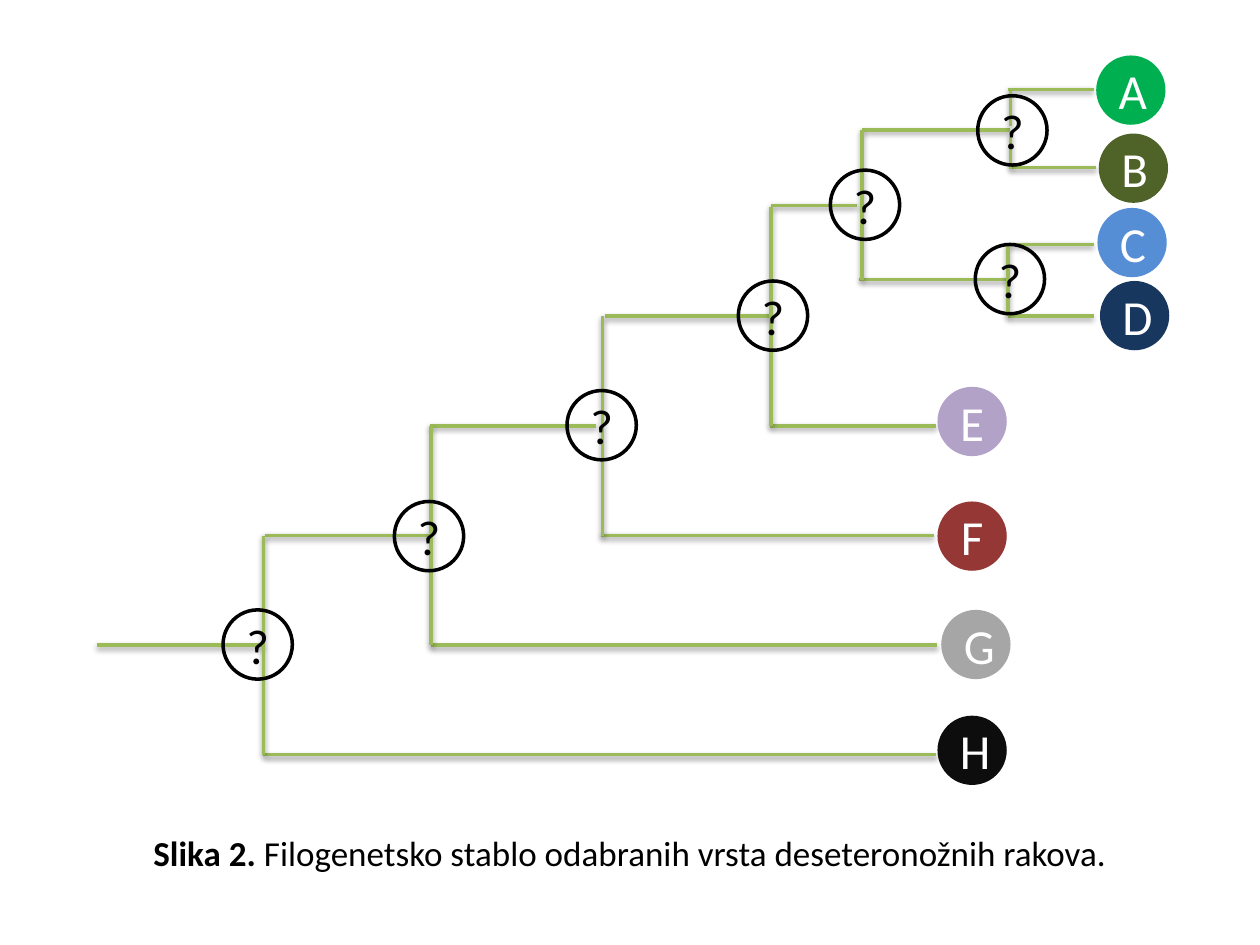
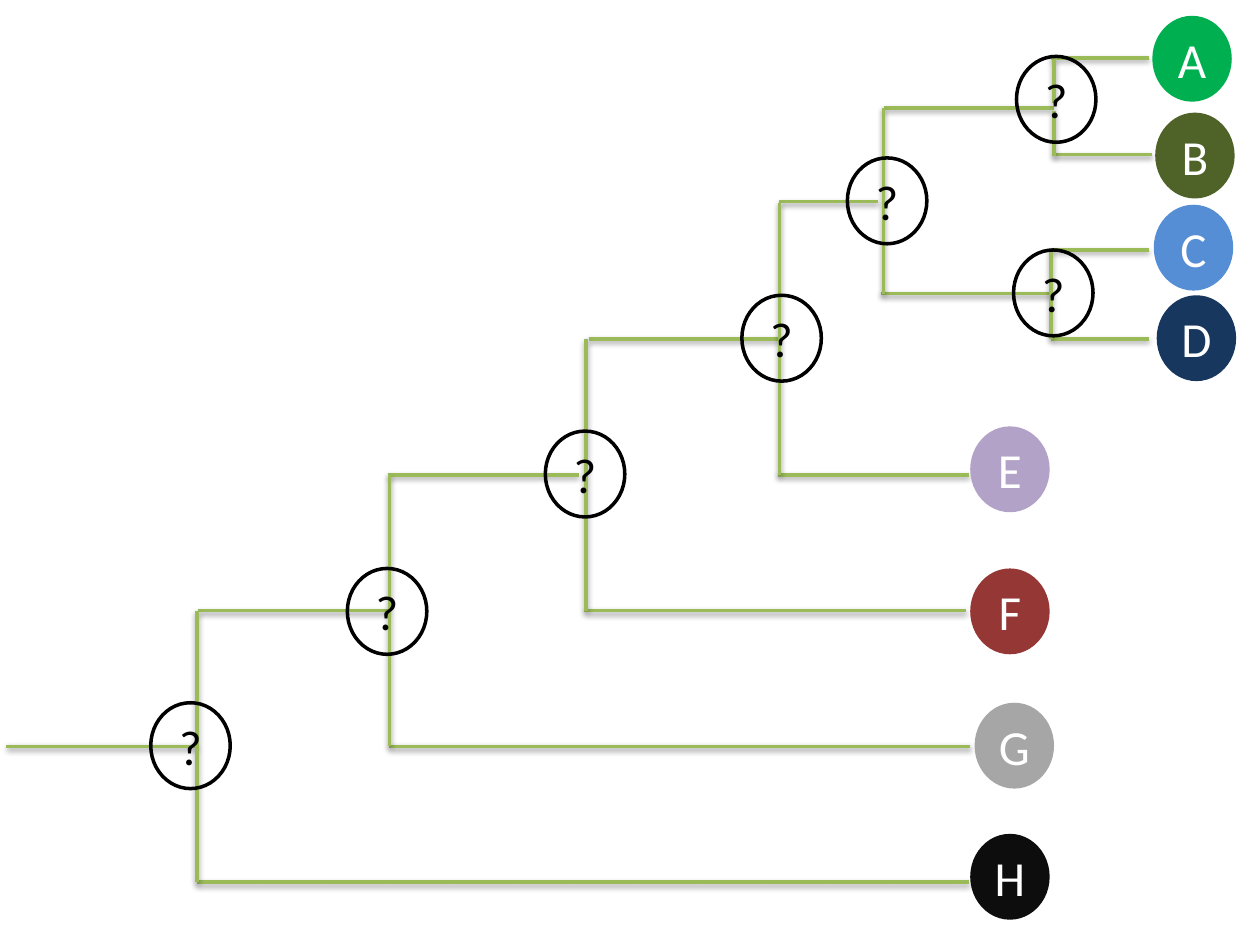
from lxml import etree
from pptx import Presentation
from pptx.dml.color import RGBColor
from pptx.enum import shapes, text
from pptx.oxml import ns
from pptx.util import Inches, Pt

FONT = "Calibri"
BRANCH, BLACK, WHITE = "9BBB59", "000000", "FFFFFF"
CAPTION = ("Slika 2. ", "Filogenetsko stablo odabranih vrsta deseteronožnih rakova.")

# The tree in inches, as laid out on the first slide
CIRCLE = 0.55
SPECIES = [  # letter, left, top, fill
    ("A", 8.7, 0.44, "00B050"), ("B", 8.72, 1.06, "4F6228"),
    ("C", 8.71, 1.65, "558ED5"), ("D", 8.73, 2.23, "17375E"),
    ("E", 7.44, 3.07, "B3A2C7"), ("F", 7.44, 3.98, "953735"),
    ("G", 7.47, 4.84, "A6A6A6"), ("H", 7.44, 5.68, "0D0D0D"),
]
ANCESTORS = [  # left, top, from the root to the tips
    (1.77, 4.84), (3.13, 3.98), (4.5, 3.1), (5.86, 2.23),
    (6.59, 1.35), (7.74, 1.94),
]
LEVEL_BRANCHES = [  # y, left end, right end
    (5.12, 0.77, 2.09), (5.99, 2.09, 7.43),
    (4.25, 2.1, 3.41), (5.12, 3.42, 7.44),
    (3.38, 3.41, 4.73), (4.25, 4.77, 7.41),
    (2.51, 4.8, 6.12), (3.38, 6.11, 7.43),
    (1.63, 6.12, 6.8), (1.03, 6.84, 8.02), (2.22, 6.82, 8),
    (0.71, 8, 8.68), (1.33, 8.02, 8.7),
    (1.94, 8, 8.68), (2.51, 8, 8.68),
]
UPRIGHT_BRANCHES = [  # x, upper end, lower end
    (2.09, 4.25, 5.99), (3.42, 3.38, 5.12), (4.78, 2.51, 4.25),
    (6.12, 1.64, 3.38), (6.84, 1.03, 1.63), (6.84, 1.63, 2.22),
    (8.02, 0.72, 1), (8.02, 1.05, 1.34),
    (8, 1.94, 2.22), (8, 2.22, 2.51),
]
# Per slide: where the tree's corner goes, its stretch, and the ancestor of A and B
CORNER = (0.77, 0.71)
LAYOUTS = [
    {"corner": CORNER, "stretch": (1, 1), "last_ancestor": (7.76, 0.76), "caption": True},
    {"corner": (0.05, 0.46), "stretch": (1.147, 1.239), "last_ancestor": (7.76, 0.7),
     "caption": False},
]


def color(value):
    return RGBColor.from_string(value)


def add_shadow(connector):
    effects = etree.SubElement(connector._element.spPr, ns.qn("a:effectLst"))
    shadow = etree.SubElement(effects, ns.qn("a:outerShdw"), blurRad="40000", dist="20000",
                              dir="5400000", rotWithShape="0")
    black = etree.SubElement(shadow, ns.qn("a:srgbClr"), val=BLACK)
    etree.SubElement(black, ns.qn("a:alpha"), val="38000")


class Tree:
    def __init__(self, slide, layout):
        self.slide, self.layout = slide, layout

    def place(self, x, y):
        """Move and stretch a point of the tree to its place on this slide."""
        return [Inches(new + (value - old) * stretch) for value, old, new, stretch
                in zip((x, y), CORNER, self.layout["corner"], self.layout["stretch"])]

    def add_branch(self, start, end):
        connector = self.slide.shapes.add_connector(
            shapes.MSO_CONNECTOR.STRAIGHT, *self.place(*start), *self.place(*end))
        connector.line.color.rgb = color(BRANCH)
        connector.line.width = Pt(2)
        add_shadow(connector)

    def add_circle(self, letter, left, top, fill=None):
        """A filled circle with white text, or an outline with black text."""
        size = [Inches(CIRCLE * stretch) for stretch in self.layout["stretch"]]
        circle = self.slide.shapes.add_shape(
            shapes.MSO_SHAPE.OVAL, *self.place(left, top), *size)
        circle.shadow.inherit = False
        if fill:
            circle.fill.solid()
            circle.fill.fore_color.rgb = color(fill)
            circle.line.fill.background()
        else:
            circle.fill.background()
            circle.line.color.rgb = color(BLACK)
            circle.line.width = Pt(2)
        circle.text_frame.vertical_anchor = text.MSO_ANCHOR.MIDDLE
        paragraph = circle.text_frame.paragraphs[0]
        paragraph.text = letter
        style(paragraph, 28, WHITE if fill else BLACK)

    def draw(self):
        for y, left, right in LEVEL_BRANCHES:
            self.add_branch((left, y), (right, y))
        for x, upper, lower in UPRIGHT_BRANCHES:
            self.add_branch((x, upper), (x, lower))
        for species in SPECIES:
            self.add_circle(*species)
        for left, top in ANCESTORS + [self.layout["last_ancestor"]]:
            self.add_circle("?", left, top)


def style(paragraph, size, text_color):
    paragraph.alignment = text.PP_ALIGN.CENTER
    paragraph.font.name = FONT
    paragraph.font.size = Pt(size)
    paragraph.font.color.rgb = color(text_color)


def add_caption(slide):
    box = slide.shapes.add_textbox(0, Inches(6.55), Inches(10), Inches(0.44))
    box.text_frame.word_wrap = True
    box.text_frame.auto_size = text.MSO_AUTO_SIZE.SHAPE_TO_FIT_TEXT
    paragraph = box.text_frame.paragraphs[0]
    style(paragraph, 20, BLACK)
    for wording, bold in zip(CAPTION, (True, False)):
        run = paragraph.add_run()
        run.text = wording
        run.font.bold = bold


def main():
    presentation = Presentation()
    presentation.slide_width, presentation.slide_height = Inches(10), Inches(7.5)
    for layout in LAYOUTS:
        slide = presentation.slides.add_slide(presentation.slide_layouts[6])
        Tree(slide, layout).draw()
        if layout["caption"]:
            add_caption(slide)
    presentation.save("out.pptx")


if __name__ == "__main__":
    main()
